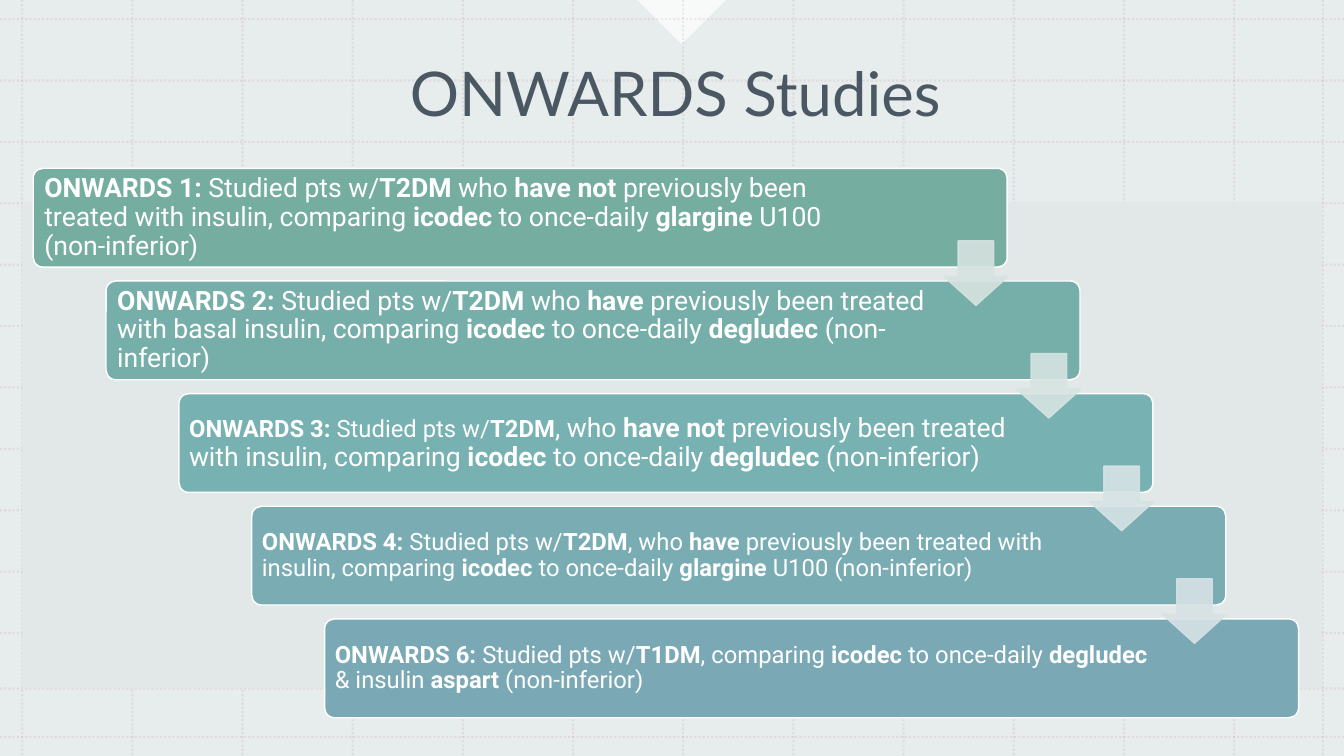
from dataclasses import dataclass

from lxml import etree
from pptx import Presentation
from pptx import util as u
from pptx.dml.color import RGBColor
from pptx.enum import dml, shapes, text
from pptx.oxml.ns import qn


@dataclass(frozen=True)
class Theme:
    white: str = "FFFFFF"
    mist: str = "E2E8E8"
    grid: str = "C796A6"
    title: str = "243441"
    bars: tuple = ("75ADA1", "76AFA9", "77B1B1", "79ADB3", "7AA9B5")
    arrows: tuple = ("D6E3E0", "D6E4E2", "D6E3E4", "D7E2E5")
    title_font: str = "Lato"
    body_font: str = "Roboto"
    title_size: int = 44
    large: int = 19
    small: int = 17


def paint(fill, color, opacity=100):
    """Make a fill solid, with opacity in percent."""
    fill.solid()
    fill.fore_color.rgb = RGBColor.from_string(color)
    if opacity < 100:
        clr = fill._xPr.find(qn("a:solidFill"))[0]
        etree.SubElement(clr, qn("a:alpha"), val=str(opacity * 1000))


def add_block(kind, box, color, opacity=100, line=None):
    sp = s.shapes.add_shape(kind, *map(u.Inches, box))
    sp.shadow.inherit = False
    paint(sp.fill, color, opacity)
    if line:
        paint(sp.line.fill, line, opacity)
        sp.line.width = u.Pt(1)
    else:
        sp.line.fill.background()
    return sp


theme = Theme()
kinds = shapes.MSO_SHAPE
WIDTH, HEIGHT = 13.33, 7.5

prs = Presentation()
prs.slide_width, prs.slide_height = u.Inches(WIDTH), u.Inches(HEIGHT)
s = prs.slides.add_slide(prs.slide_layouts[6])

# Background wash, top notch and dotted grid
paint(s.background.fill, theme.white)
add_block(kinds.RECTANGLE, (0, 0, WIDTH, HEIGHT), theme.mist, 80)
notch = add_block(kinds.RIGHT_TRIANGLE, (6.45, -0.31, 0.62, 0.62), theme.white, 75)
notch.rotation = 315

columns = [0.22 + 12.02 / 11 * i for i in range(12)] + [13.12]
rows = [0.19 + 6.09 / 10 * i for i in range(11)] + [6.83, 7.31]
grid = [(x, 0, x, HEIGHT) for x in columns] + [(0, y, WIDTH, y) for y in rows]
for ends in grid:
    rule = s.shapes.add_connector(shapes.MSO_CONNECTOR.STRAIGHT, *map(u.Inches, ends))
    paint(rule.line.fill, theme.grid, 20)
    rule.line.width = u.Pt(1.5)
    rule.line.dash_style = dml.MSO_LINE.ROUND_DOT
    etree.SubElement(rule._element.spPr, qn("a:effectLst"))

add_block(kinds.RECTANGLE, (0.22, 2.01, 12.89, 4.82), theme.mist)

# Title
title = s.shapes.add_textbox(*map(u.Inches, (0.41, 0.14, 12.58, 1.64)))
tf = title.text_frame
tf.word_wrap = True
tf.vertical_anchor = text.MSO_ANCHOR.MIDDLE
p = tf.paragraphs[0]
p.alignment = text.PP_ALIGN.CENTER
p.line_spacing = 0.9
r = p.add_run()
r.text = "ONWARDS Studies"
r.font.name, r.font.size = theme.title_font, u.Pt(theme.title_size)
paint(r.font.fill, theme.title, 80)

# Study steps: text width, inset, size of the first three runs, size of the
# rest, and runs split by "|" that alternate bold and regular
studies = [
    (8.49, 0.08, theme.large, theme.large,
     "ONWARDS 1: |Studied pts w/|T2DM |who |have not |previously been treated with "
     "insulin, comparing |icodec| to once-daily |glargine| U100 (non-inferior)"),
    (8.25, 0.08, theme.large, theme.large,
     "ONWARDS 2: |Studied pts w/|T2DM |who |have| previously been treated with basal "
     "insulin, comparing |icodec| to once-daily |degludec| (non-inferior)"),
    (8.25, 0.07, theme.small, theme.large,
     "ONWARDS 3: |Studied pts w/|T2DM|, who |have not |previously been treated with "
     "insulin, comparing |icodec| to once-daily |degludec| (non-inferior)"),
    (8.25, 0.07, theme.small, theme.small,
     "ONWARDS 4: |Studied pts w/|T2DM|, who |have |previously been treated with "
     "insulin, comparing |icodec| to once-daily |glargine| U100 (non-inferior)"),
    (8.25, 0.07, theme.small, theme.small,
     "ONWARDS 6: |Studied pts w/|T1DM|, comparing |icodec| to once-daily "
     "|degludec |& insulin |aspart| (non-inferior)"),
]
STEP_X, STEP_Y = 2.89 / 4, 4.47 / 4

for i, (width, inset, lead_size, rest_size, wording) in enumerate(studies):
    x, y = 0.33 + STEP_X * i, 1.67 + STEP_Y * i
    bar = add_block(kinds.ROUNDED_RECTANGLE, (x, y, 9.66, 0.98),
                    theme.bars[i], line=theme.white)
    bar.adjustments[0] = 0.1

    label = s.shapes.add_textbox(*map(u.Inches, (x + 0.03, y + 0.03, width, 0.92)))
    tf = label.text_frame
    tf.word_wrap = True
    tf.vertical_anchor = text.MSO_ANCHOR.MIDDLE
    tf.margin_left = tf.margin_right = u.Inches(inset)
    tf.margin_top = tf.margin_bottom = u.Inches(inset)
    p = tf.paragraphs[0]
    p.line_spacing = 0.9
    for n, words in enumerate(wording.split("|")):
        r = p.add_run()
        r.text = words
        r.font.name = theme.body_font
        r.font.size = u.Pt(lead_size if n < 3 else rest_size)
        r.font.bold = n % 2 == 0
        paint(r.font.fill, theme.white)

for i, color in enumerate(theme.arrows):
    arrow = add_block(kinds.DOWN_ARROW,
                      (9.36 + STEP_X * i, 2.39 + STEP_Y * i, 0.64, 0.64),
                      color, 90, line=color)
    arrow.adjustments[0], arrow.adjustments[1] = 0.45, 0.55
    arrow.adjustments[0], arrow.adjustments[1] = 0.55, 0.45

prs.save("out.pptx")
